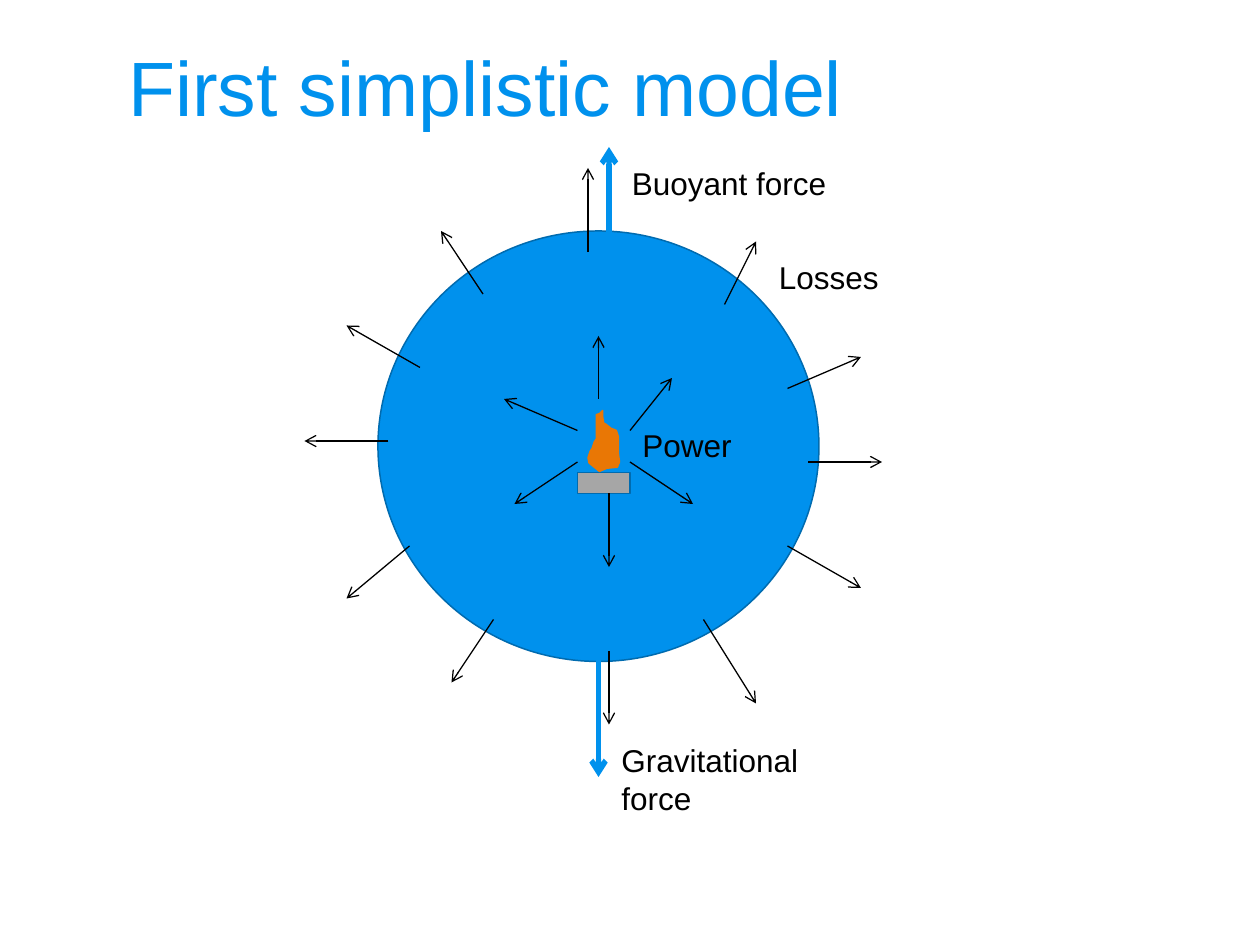
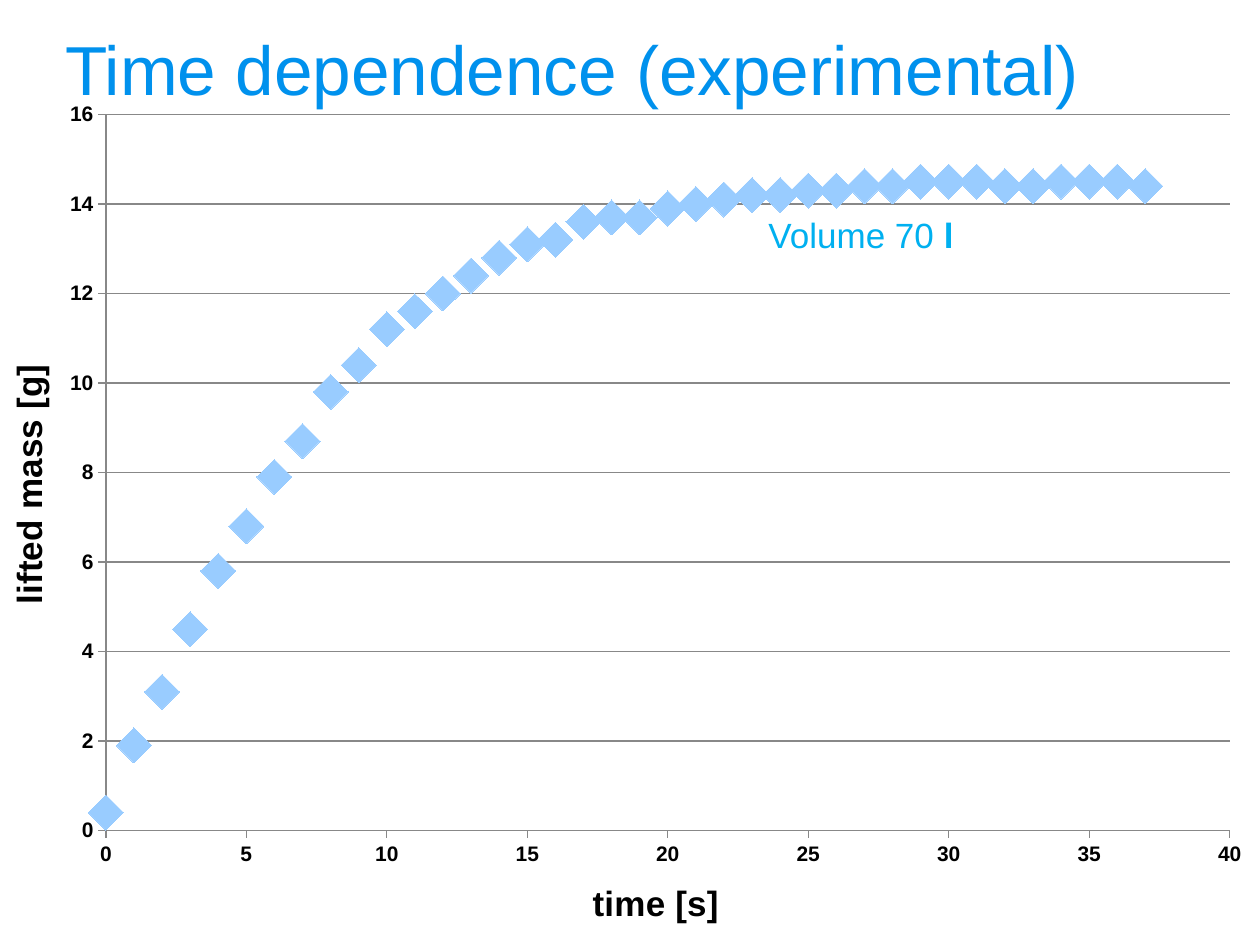
from lxml import etree
from pptx import Presentation
from pptx.chart.data import XyChartData
from pptx.dml.color import RGBColor
from pptx.enum.chart import XL_CHART_TYPE as ChartType, XL_MARKER_STYLE as Marker, XL_TICK_MARK as Tick
from pptx.enum.shapes import MSO_CONNECTOR as Connector, MSO_SHAPE as Shape
from pptx.enum.text import MSO_ANCHOR as Anchor, MSO_AUTO_SIZE as AutoSize, PP_ALIGN as Align
from pptx.oxml import parse_xml
from pptx.oxml.ns import nsdecls, qn
from pptx.util import Emu, Pt

PX = 7620  # 120 px to the inch
FONT = "Arial"
BLUE, EDGE, BLACK, GREY, ORANGE = "0091ED", "006BAF", "000000", "A6A6A6", "E97705"
CYAN, MARKER, AXIS = "00B0F0", "99CCFF", "888888"

MODEL_TITLE = ("First simplistic model", (110, 30, 863, 103), 44)
TIME_TITLE = ("Time dependence (experimental)", (50, -10, 1080, 150), 39.6)

BALLOON = (360, 220, 420, 410)
BURNER = (550, 450, 50, 20)
FLAME = [(571, 449), (566, 445), (561, 441), (560, 436), (562, 430), (564, 427), (566, 421),
         (568, 418), (568, 395), (571, 394), (574, 391), (574, 397), (575, 403), (577, 404),
         (582, 408), (587, 410), (589, 416), (589, 432), (590, 440), (588, 445), (578, 446)]
POWER_ARROWS = [
    (550, 440, 490, 480), (600, 410, 640, 360), (580, 470, 580, 540),
    (570, 380, 570, 320), (550, 410, 480, 380), (600, 440, 660, 480),
]
LOSS_ARROWS = [
    (750, 370, 820, 340), (670, 590, 720, 670), (390, 520, 330, 570), (750, 520, 820, 560),
    (770, 440, 840, 440), (370, 420, 290, 420), (460, 280, 420, 220), (690, 290, 720, 230),
    (580, 620, 580, 690), (560, 240, 560, 160), (400, 350, 330, 310), (470, 590, 430, 650),
]
FORCE_ARROWS = [(570, 480, 570, 740), (580, 360, 580, 140)]
LABELS = [
    ("Power", (600, 400, 140, 48)),
    ("Losses", (730, 240, 140, 48)),
    ("Buoyant force", (590, 150, 210, 48)),
    ("Gravitational force", (580, 700, 260, 85)),
]

CHART_BOX = (0, 80, 1200, 810)
PLOT = {"x": 0.084, "y": 0.036, "w": 0.892, "h": 0.842}
LIFTED_MASS = [  # one reading each second
    0.4, 1.9, 3.1, 4.5, 5.8, 6.8, 7.9, 8.7, 9.8, 10.4, 11.2, 11.6, 12, 12.4, 12.8, 13.1, 13.2,
    13.6, 13.7, 13.7, 13.9, 14, 14.1, 14.2, 14.2, 14.3, 14.3, 14.4, 14.4, 14.5, 14.5, 14.5,
    14.4, 14.4, 14.5, 14.5, 14.5, 14.4]
VOLUME_BOX = (720, 197, 380, 53)


def rgb(code):
    return RGBColor.from_string(code)


def emu(lengths):
    return [Emu(length * PX) for length in lengths]


def style(font, size, color=BLACK, bold=False):
    for name, value in {"name": FONT, "size": Pt(size), "bold": bold}.items():
        setattr(font, name, value)
    font.color.rgb = rgb(color)


def paint(shape, fill, edge):
    shape.shadow.inherit = False
    shape.fill.solid()
    shape.fill.fore_color.rgb = rgb(fill)
    shape.line.color.rgb = rgb(edge)
    shape.line.width = Pt(0.85)


def add_titled_slide(deck, title):
    words, box, size = title
    slide = deck.slides.add_slide(deck.slide_layouts[5])
    heading = slide.shapes.title
    for side, length in zip(("left", "top", "width", "height"), emu(box)):
        setattr(heading, side, length)
    heading.text = words
    frame = heading.text_frame
    for name, value in {"vertical_anchor": Anchor.MIDDLE, "word_wrap": True,
                        "auto_size": AutoSize.NONE}.items():
        setattr(frame, name, value)
    frame.paragraphs[0].alignment = Align.LEFT
    style(frame.paragraphs[0].runs[0].font, size, BLUE)
    return slide


def add_label(slide, box, runs, size, color=BLACK):
    """Add one line of text; runs are (words, bold) pairs."""
    frame = slide.shapes.add_textbox(*emu(box)).text_frame
    frame.word_wrap = True
    frame.auto_size = AutoSize.SHAPE_TO_FIT_TEXT
    for words, bold in runs:
        run = frame.paragraphs[0].add_run()
        run.text = words
        style(run.font, size, color, bold)


def add_arrow(slide, ends, color=BLACK, width=0.75):
    arrow = slide.shapes.add_connector(Connector.STRAIGHT, *emu(ends))
    arrow.line.color.rgb = rgb(color)
    arrow.line.width = Pt(width)
    properties = arrow.element.spPr
    etree.SubElement(properties.find(qn("a:ln")), qn("a:tailEnd"), type="arrow")
    etree.SubElement(properties, qn("a:effectLst"))


def format_axis(axis, title, top, step):
    for name, value in {"minimum_scale": 0, "maximum_scale": top, "major_unit": step,
                        "major_tick_mark": Tick.OUTSIDE, "minor_tick_mark": Tick.NONE}.items():
        setattr(axis, name, value)
    axis.format.line.color.rgb = rgb(AXIS)
    style(axis.tick_labels.font, 12, bold=True)
    axis.tick_labels.number_format = "General"
    axis.tick_labels.number_format_is_linked = False
    axis.axis_title.text_frame.text = title
    style(axis.axis_title.text_frame.paragraphs[0].runs[0].font, 20, bold=True)


def set_plot_area(chart):
    area = chart.element.find(f".//{qn('c:plotArea')}")
    for old in area.findall(qn("c:layout")):
        area.remove(old)
    modes = "".join(f'<c:{side}Mode val="edge"/>' for side in "xy")
    sizes = "".join(f'<c:{side} val="{share}"/>' for side, share in PLOT.items())
    area.insert(0, parse_xml(
        f'<c:layout {nsdecls("c")}><c:manualLayout><c:layoutTarget val="inner"/>'
        f"{modes}{sizes}</c:manualLayout></c:layout>"))


def build_model(deck):
    slide = add_titled_slide(deck, MODEL_TITLE)
    paint(slide.shapes.add_shape(Shape.OVAL, *emu(BALLOON)), BLUE, EDGE)
    paint(slide.shapes.add_shape(Shape.RECTANGLE, *emu(BURNER)), GREY, EDGE)
    outline = slide.shapes.build_freeform(*FLAME[0], scale=PX)
    outline.add_line_segments(FLAME[1:], close=True)
    paint(outline.convert_to_shape(), ORANGE, ORANGE)
    for ends in POWER_ARROWS + LOSS_ARROWS:
        add_arrow(slide, ends)
    for ends in FORCE_ARROWS:
        add_arrow(slide, ends, BLUE, 3)
    for words, box in LABELS:
        add_label(slide, box, [(words, False)], 18)


def build_time_dependence(deck):
    slide = add_titled_slide(deck, TIME_TITLE)
    readings = XyChartData()
    mass = readings.add_series("Series 1")
    for second, grams in enumerate(LIFTED_MASS):
        mass.add_data_point(second, grams)
    holder = slide.shapes.add_chart(ChartType.XY_SCATTER, *emu(CHART_BOX), readings)
    holder.element.addnext(slide.shapes.title.element)  # title in front of the chart

    chart = holder.chart
    chart.has_legend = chart.has_title = False
    style(chart.font, 10)
    format_axis(chart.category_axis, "time [s]", 40, 5)
    format_axis(chart.value_axis, "lifted mass [g]", 16, 2)
    chart.category_axis.has_major_gridlines = False
    chart.value_axis.major_gridlines.format.line.color.rgb = rgb(AXIS)
    set_plot_area(chart)

    chart.plots[0].vary_by_categories = False
    curve = chart.plots[0].series[0]
    curve.smooth = False
    curve.format.line.fill.background()
    curve.marker.style = Marker.DIAMOND
    curve.marker.size = 20
    curve.marker.format.fill.solid()
    curve.marker.format.fill.fore_color.rgb = rgb(MARKER)
    curve.marker.format.line.fill.background()

    add_label(slide, VOLUME_BOX, [("Volume 70", False), (" l", True)], 20, CYAN)


def main():
    deck = Presentation()
    deck.slide_width, deck.slide_height = emu((1200, 900))
    build_model(deck)
    build_time_dependence(deck)
    deck.save("out.pptx")


if __name__ == "__main__":
    main()
